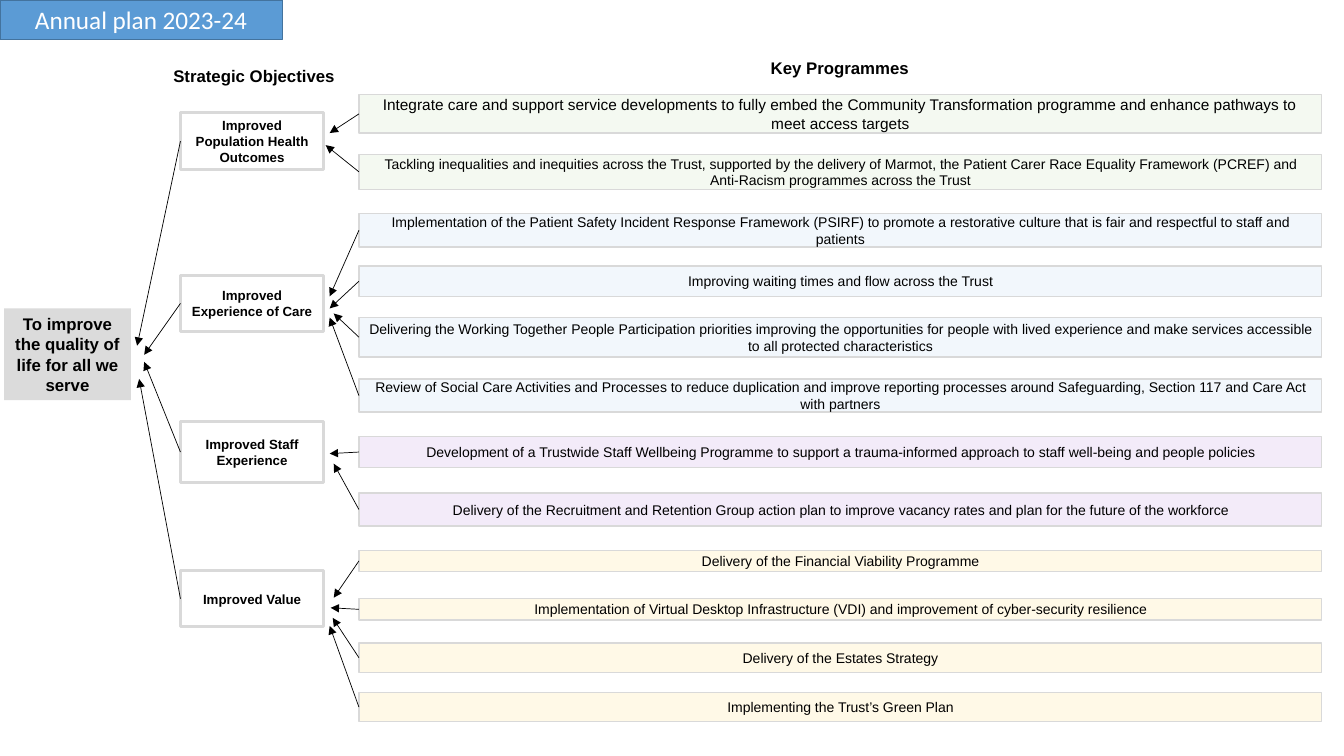
from lxml import etree
from pptx import Presentation
from pptx.dml.color import RGBColor
from pptx.enum.shapes import MSO_CONNECTOR, MSO_SHAPE
from pptx.enum.text import MSO_ANCHOR, PP_ALIGN
from pptx.oxml.ns import qn
from pptx.util import Pt

PX = 9144  # 100 px to the inch
BLACK = RGBColor(0x00, 0x00, 0x00)
WHITE = RGBColor(0xFF, 0xFF, 0xFF)
GREY = RGBColor(0xDB, 0xDB, 0xDB)
BORDER = RGBColor(0xD9, 0xD9, 0xD9)
BLUE = RGBColor(0x5B, 0x9B, 0xD5)
DARK_BLUE = RGBColor(0x43, 0x73, 0x9E)
PALE_GREEN = RGBColor(0xF4, 0xF9, 0xF1)
PALE_BLUE = RGBColor(0xF2, 0xF7, 0xFC)
PALE_PURPLE = RGBColor(0xF3, 0xEB, 0xF9)
PALE_YELLOW = RGBColor(0xFF, 0xF9, 0xE7)

# Content
TITLE = "Annual plan 2023-24"
AIM = "To improve the quality of life for all we serve"
HEADINGS = [("Strategic Objectives", 139, 60), ("Key Programmes", 720, 52)]

# Objective: text, top, height, arrow tip, programme colour, programmes
# Programme: text, top, height, arrow tip, font size
OBJECTIVES = [
    ("Improved Population Health Outcomes", 112, 56, (136, 343), PALE_GREEN, [
        ("Integrate care and support service developments to fully embed the Community "
         "Transformation programme and enhance pathways to meet access targets",
         94, 38, (327, 132), 11),
        ("Tackling inequalities and inequities across the Trust, supported by the delivery of "
         "Marmot, the Patient Carer Race Equality Framework (PCREF) and Anti-Racism programmes "
         "across the Trust", 153, 35, (323, 144), 10),
    ]),
    ("Improved Experience of Care", 273, 56, (143, 352), PALE_BLUE, [
        ("Implementation of the Patient Safety Incident Response Framework (PSIRF) to promote "
         "a restorative culture that is fair and respectful to staff and patients",
         212, 33, (327, 294), 10),
        ("Improving waiting times and flow across the Trust", 264, 30, (327, 306), 10),
        ("Delivering the Working Together People Participation priorities improving the "
         "opportunities for people with lived experience and make services accessible to all "
         "protected characteristics", 315, 39, (331, 311), 10),
        ("Review of Social Care Activities and Processes to reduce duplication and improve "
         "reporting processes around Safeguarding, Section 117 and Care Act with partners",
         376, 33, (327, 315), 10),
    ]),
    ("Improved Staff Experience", 418, 61, (143, 359), PALE_PURPLE, [
        ("Development of a Trustwide Staff Wellbeing Programme to support a trauma-informed "
         "approach to staff well-being and people policies", 433, 31, (327, 450), 10),
        ("Delivery of the Recruitment and Retention Group action plan to improve vacancy rates "
         "and plan for the future of the workforce", 489, 33, (331, 460), 10),
    ]),
    ("Improved Value", 566, 56, (138, 376), PALE_YELLOW, [
        ("Delivery of the Financial Viability Programme", 546, 21, (331, 593), 10),
        ("Implementation of Virtual Desktop Infrastructure (VDI) and improvement of "
         "cyber-security resilience", 594, 21, (328, 603), 10),
        ("Delivery of the Estates Strategy", 638, 29, (330, 613), 10),
        ("Implementing the Trust’s Green Plan", 687, 29, (327, 621), 10),
    ]),
]

# Columns
OBJECTIVE_LEFT, OBJECTIVE_WIDTH = 179, 142
PROGRAMME_LEFT, PROGRAMME_WIDTH = 356, 955

deck = Presentation()
deck.slide_width, deck.slide_height = 1333 * PX, 750 * PX
slide = deck.slides.add_slide(deck.slide_layouts[6])
shapes = slide.shapes


def write(holder, text, size, bold=False, color=BLACK, face="Arial"):
    frame = holder.text_frame
    frame.word_wrap = True
    paragraph = frame.paragraphs[0]
    paragraph.text = text
    paragraph.alignment = PP_ALIGN.CENTER
    font = paragraph.font
    font.name, font.size, font.bold = face, Pt(size), bold
    font.color.rgb = color


def add_box(bounds, text, size, fill=None, border=None, border_width=1, **style):
    box = shapes.add_shape(MSO_SHAPE.RECTANGLE, *(n * PX for n in bounds))
    box.shadow.inherit = False
    if fill is None:
        box.fill.background()
    else:
        box.fill.solid()
        box.fill.fore_color.rgb = fill
    if border is None:
        box.line.fill.background()
    else:
        box.line.color.rgb = border
        box.line.width = Pt(border_width)
    box.text_frame.vertical_anchor = MSO_ANCHOR.MIDDLE
    write(box, text, size, **style)


def add_arrow(left, top, height, tip):
    """Point from the middle of a box's left edge to the tip."""
    ends = (left, top + height / 2, *tip)
    arrow = shapes.add_connector(MSO_CONNECTOR.STRAIGHT, *(round(n * PX) for n in ends))
    arrow.line.color.rgb = BLACK
    arrow.line.width = Pt(0.5)
    etree.SubElement(arrow.line._get_or_add_ln(), qn("a:tailEnd"), type="triangle")
    etree.SubElement(arrow._element.spPr, qn("a:effectLst"))


# Title, aim and column headings
add_box((0, 0, 280, 39), TITLE, 18, BLUE, DARK_BLUE, color=WHITE, face="Calibri")
add_box((4, 306, 126, 91), AIM, 12, GREY, bold=True)
for heading, left, top in HEADINGS:
    write(shapes.add_textbox(left * PX, top * PX, 226 * PX, 30 * PX), heading, 12, bold=True)

# Objectives with their programmes
for objective, top, height, tip, tint, programmes in OBJECTIVES:
    add_box((OBJECTIVE_LEFT, top, OBJECTIVE_WIDTH, height), objective, 9.5,
            border=BORDER, border_width=2.25, bold=True)
    add_arrow(OBJECTIVE_LEFT, top, height, tip)
    for programme, row_top, row_height, row_tip, size in programmes:
        add_box((PROGRAMME_LEFT, row_top, PROGRAMME_WIDTH, row_height), programme, size,
                tint, BORDER)
        add_arrow(PROGRAMME_LEFT, row_top, row_height, row_tip)

deck.save("out.pptx")
